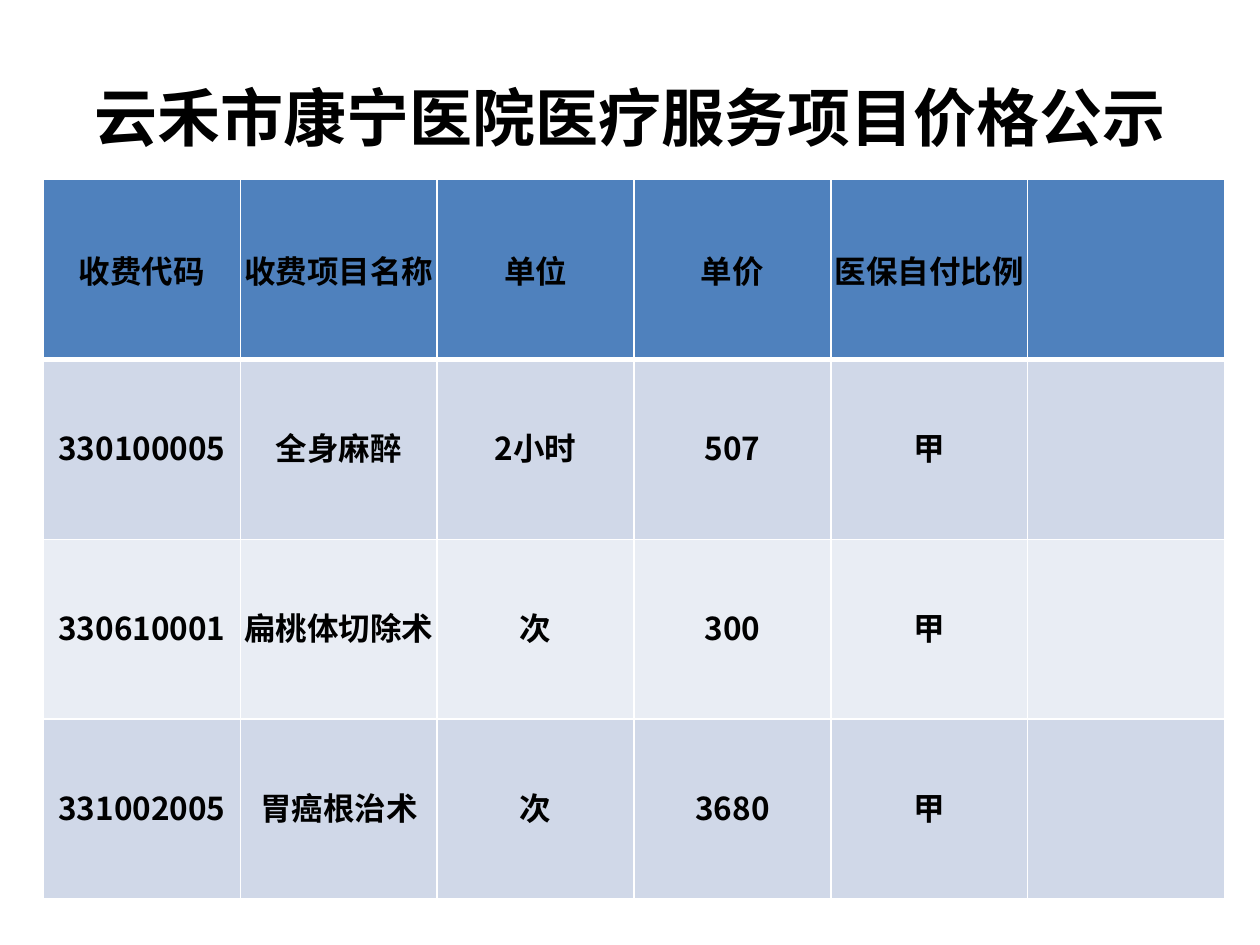
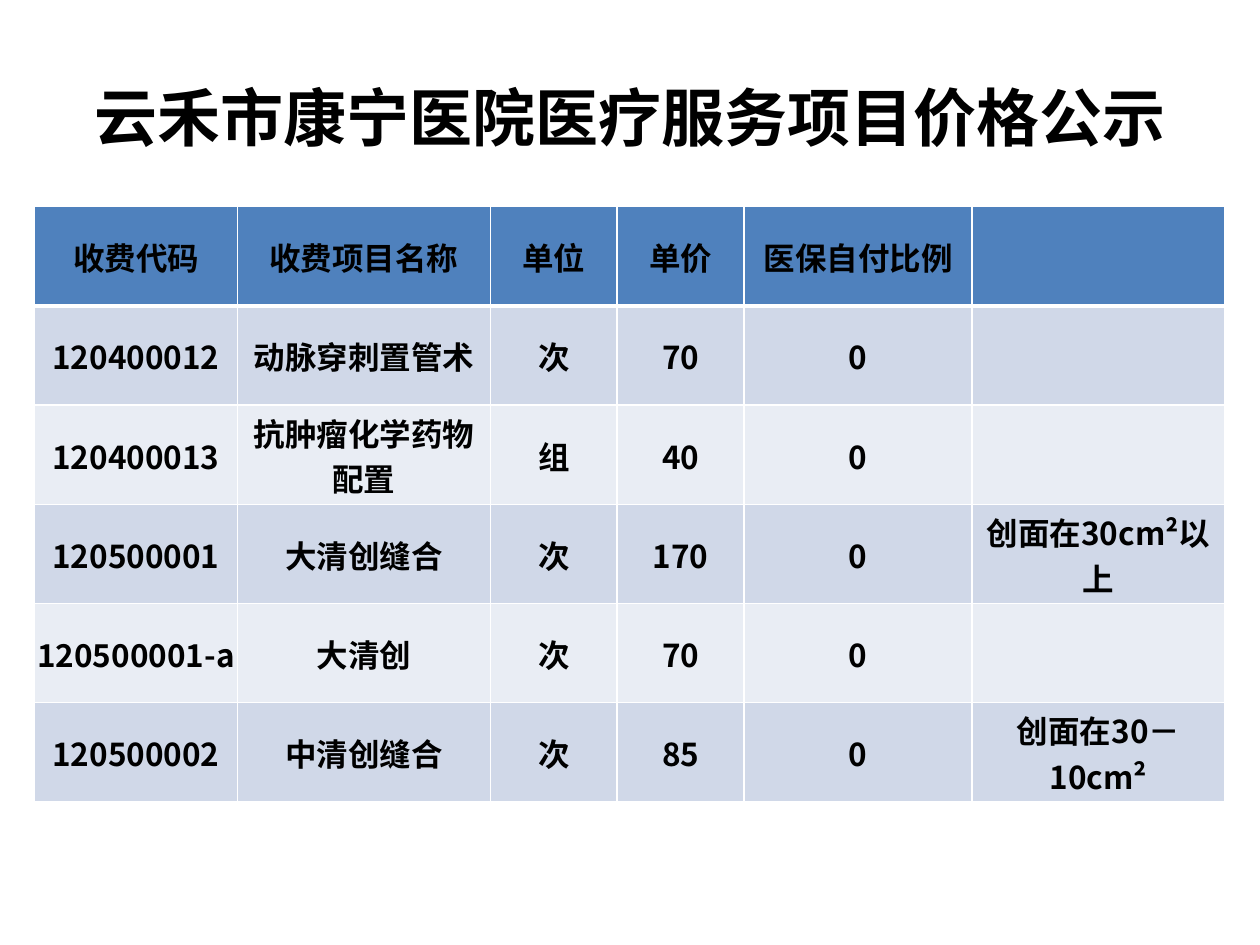
from lxml.etree import SubElement
from pptx import Presentation
from pptx.dml.color import RGBColor
from pptx.enum.text import MSO_ANCHOR, PP_ALIGN
from pptx.oxml import parse_xml
from pptx.oxml.ns import nsdecls, qn
from pptx.util import Pt

BLACK = RGBColor(0x00, 0x00, 0x00)
WHITE = RGBColor(0xFF, 0xFF, 0xFF)
HEADER_BLUE = RGBColor(0x4F, 0x81, 0xBD)
BAND_DARK = RGBColor(0xD0, 0xD8, 0xE8)
BAND_LIGHT = RGBColor(0xE9, 0xED, 0xF4)
CJK_FONT = "Noto Sans CJK SC"

TITLE = "云禾市康宁医院医疗服务项目价格公示"
HEADINGS = ["收费代码", "收费项目名称", "单位", "单价", "医保自付比例", ""]

PRICE_LISTS = [
    {
        "left": 24.9, "top": 102.6, "row_height": 102.8, "bottom_inset": 3.6,
        "widths": [112.5] * 6,
        "items": [
            ["330100005", "全身麻醉", "2小时", "507", "甲", ""],
            ["330610001", "扁桃体切除术", "次", "300", "甲", ""],
            ["331002005", "胃癌根治术", "次", "3680", "甲", ""],
        ],
    },
    {
        "left": 19.8, "top": 118.1, "row_height": 56.7, "bottom_inset": 0,
        "widths": [115.8, 144.6, 72.5, 72.5, 130.3, 144.6],
        "items": [
            ["120400012", "动脉穿刺置管术", "次", "70", "0", ""],
            ["120400013", "抗肿瘤化学药物配置", "组", "40", "0", ""],
            ["120500001", "大清创缝合", "次", "170", "0", "创面在30cm²以上"],
            ["120500001-a", "大清创", "次", "70", "0", ""],
            ["120500002", "中清创缝合", "次", "85", "0", "创面在30－10cm²"],
        ],
    },
]


def style_text(text_frame, font_name, size):
    paragraph = text_frame.paragraphs[0]
    paragraph.alignment = PP_ALIGN.CENTER
    for run in paragraph.runs:
        run.font.name = font_name
        run.font.size = Pt(size)
        run.font.bold = True
        run.font.color.rgb = BLACK
        SubElement(run.font._element, qn("a:ea")).set("typeface", CJK_FONT)


def add_borders(cell, top, bottom):
    borders = [("lnL", 1), ("lnR", 1), ("lnT", top), ("lnB", bottom)]
    for position, (side, width) in enumerate(borders):
        line = parse_xml(
            f'<a:{side} {nsdecls("a")} w="{Pt(width)}"><a:solidFill>'
            f'<a:srgbClr val="{WHITE}"/></a:solidFill></a:{side}>'
        )
        cell._tc.get_or_add_tcPr().insert(position, line)


prs = Presentation()
prs.slide_width, prs.slide_height = Pt(720), Pt(540)

for price_list in PRICE_LISTS:
    slide = prs.slides.add_slide(prs.slide_layouts[5])
    title = slide.shapes.title
    title.left, title.top, title.width, title.height = Pt(36), Pt(21.6), Pt(648), Pt(90)
    title.text_frame.text = TITLE
    title.text_frame.vertical_anchor = MSO_ANCHOR.MIDDLE
    style_text(title.text_frame, "Calibri", 36)

    rows = [HEADINGS] + price_list["items"]
    widths = price_list["widths"]
    row_height = price_list["row_height"]
    prices = slide.shapes.add_table(
        len(rows), len(widths), Pt(price_list["left"]), Pt(price_list["top"]),
        Pt(sum(widths)), Pt(row_height * len(rows)),
    ).table
    for column, width in zip(prices.columns, widths):
        column.width = Pt(width)

    for row_index, row in enumerate(rows):
        prices.rows[row_index].height = Pt(row_height)
        is_header = row_index == 0
        band = BAND_DARK if row_index % 2 else BAND_LIGHT
        for column_index, wording in enumerate(row):
            cell = prices.cell(row_index, column_index)
            cell.text_frame.text = wording
            cell.vertical_anchor = MSO_ANCHOR.MIDDLE
            cell.margin_left = cell.margin_right = cell.margin_top = Pt(0.75)
            cell.margin_bottom = Pt(0 if is_header else price_list["bottom_inset"])
            style_text(cell.text_frame, CJK_FONT, 18)
            cell.fill.solid()
            cell.fill.fore_color.rgb = HEADER_BLUE if is_header else band
            add_borders(cell, 3 if row_index == 1 else 1, 3 if is_header else 1)

prs.save("out.pptx")
